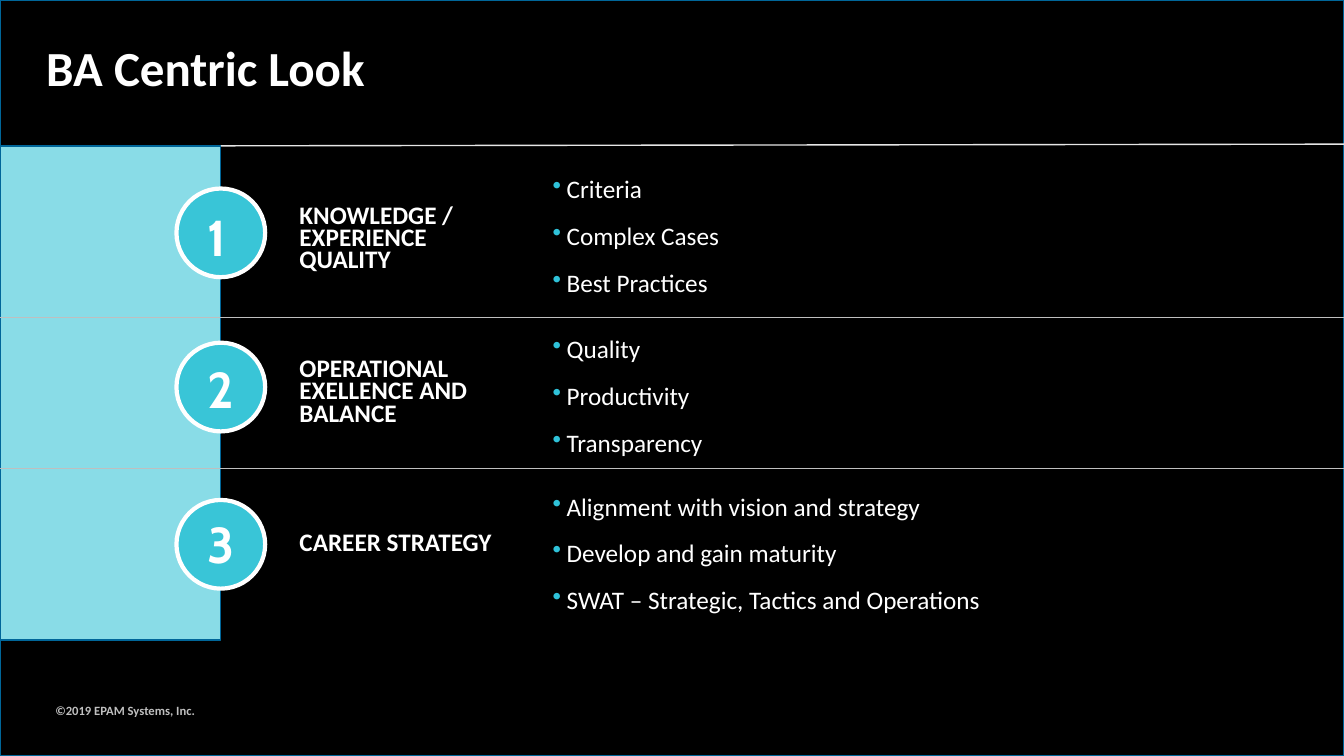
from lxml.etree import SubElement
from pptx import Presentation
from pptx.dml.color import RGBColor
from pptx.enum.shapes import MSO_CONNECTOR, MSO_SHAPE
from pptx.enum.text import MSO_ANCHOR
from pptx.oxml.ns import qn
from pptx.util import Inches, Pt

BLACK = RGBColor(0x00, 0x00, 0x00)
WHITE = RGBColor(0xFF, 0xFF, 0xFF)
BLUE = RGBColor(0x00, 0x66, 0x99)
AQUA = RGBColor(0x89, 0xDC, 0xE7)
TEAL = RGBColor(0x39, 0xC5, 0xD7)
BULLET = RGBColor(0x2F, 0xC2, 0xD9)
GREY = RGBColor(0xBF, 0xBF, 0xBF)
PALE = RGBColor(0xE6, 0xE6, 0xE6)

WIDTH, HEIGHT = 13.33, 7.5
HEADLINE = {"line_spacing": 0.9}
TOPIC = {"line_spacing": Pt(16), "space_after": Pt(3)}
POINT = {"line_spacing": 1.2, "space_after": Pt(7.5)}
FLUSH = {"margin_left": 0, "margin_top": 0, "margin_right": 0, "margin_bottom": 0,
         "vertical_anchor": MSO_ANCHOR.MIDDLE}

SECTIONS = [
    ("KNOWLEDGE / EXPERIENCE QUALITY", ["Criteria", "Complex Cases", "Best Practices"],
     {"topic": 1.73, "points": 1.65, "circle": 1.87, "number": 2.0}),
    ("OPERATIONAL EXELLENCE AND BALANCE", ["Quality", "Productivity", "Transparency"],
     {"topic": 3.25, "points": 3.24, "circle": 3.4, "number": 3.5}),
    ("CAREER STRATEGY",
     ["Alignment with vision and strategy", "Develop and gain maturity",
      "SWAT – Strategic, Tactics and Operations"],
     {"topic": 4.76, "points": 4.8, "circle": 4.96, "number": 5.04}),
]


def apply(target, values):
    for name, value in values.items():
        setattr(target, name, value)


class SlideBuilder:
    """Holds the text style and the slide, and draws each kind of element."""

    def __init__(self, slide, font="Calibri", size=18, color=WHITE):
        self.slide = slide
        self.style = {"name": font, "size": size, "color": color, "bold": True}

    def shape(self, preset, box, fill, outline, weight=1):
        panel = self.slide.shapes.add_shape(preset, *map(Inches, box))
        panel.shadow.inherit = False
        panel.fill.solid()
        panel.fill.fore_color.rgb = fill
        panel.line.color.rgb = outline
        panel.line.width = Pt(weight)

    def rule(self, left_y, right_y, color):
        divider = self.slide.shapes.add_connector(
            MSO_CONNECTOR.STRAIGHT, Inches(0), Inches(left_y), Inches(WIDTH), Inches(right_y))
        divider.line.color.rgb = color
        divider.line.width = Pt(1)
        SubElement(divider.element.spPr, qn("a:effectLst"))

    def text(self, lines, box, layout=None, spacing=None, bulleted=False, **changes):
        style = self.style | changes
        frame = self.slide.shapes.add_textbox(*map(Inches, box)).text_frame
        apply(frame, {"word_wrap": True} | (layout or {}))
        for index, line in enumerate(lines):
            paragraph = frame.add_paragraph() if index else frame.paragraphs[0]
            apply(paragraph, spacing or {})
            if bulleted:
                self.bullet(paragraph)
            run = paragraph.add_run()
            run.text = line
            apply(run.font, {"name": style["name"], "size": Pt(style["size"]),
                             "bold": style["bold"]})
            run.font.color.rgb = style["color"]

    def bullet(self, paragraph):
        properties = paragraph._p.get_or_add_pPr()
        indent = Inches(0.14)
        properties.set("marL", str(indent))
        properties.set("indent", str(-indent))
        tint = SubElement(properties, qn("a:buClr"))
        SubElement(tint, qn("a:srgbClr"), val=str(BULLET))
        SubElement(properties, qn("a:buChar"), char="•")


def main():
    deck = Presentation()
    deck.slide_width, deck.slide_height = Inches(WIDTH), Inches(HEIGHT)
    builder = SlideBuilder(deck.slides.add_slide(deck.slide_layouts[6]))

    builder.shape(MSO_SHAPE.RECTANGLE, (0, 0, WIDTH, HEIGHT), BLACK, BLUE)
    builder.rule(1.45, 1.43, PALE)
    builder.text(["©2019 EPAM Systems, Inc."], (0.45, 6.94, 7.55, 0.33),
                 spacing=HEADLINE, size=9, color=GREY)
    builder.text(["BA Centric Look"], (0.36, 0.39, 12.62, 0.45), spacing=HEADLINE, size=35)

    builder.shape(MSO_SHAPE.RECTANGLE, (0, 1.45, 2.19, 4.9), AQUA, BLUE)
    for divider_y in (3.15, 4.65):
        builder.rule(divider_y, divider_y, GREY)

    for number, (topic, points, top) in enumerate(SECTIONS, 1):
        builder.text([topic], (2.97, top["topic"], 2.09, 1.31), FLUSH, TOPIC)
        builder.text(points, (5.48, top["points"], 7.89, 1.31), FLUSH, POINT,
                     bulleted=True, bold=False)
        builder.shape(MSO_SHAPE.OVAL, (1.75, top["circle"], 0.88, 0.88), TEAL, WHITE, 3)
        builder.text([str(number)], (1.96, top["number"], 0.47, 0.71), name="Cabin", size=36)

    deck.save("out.pptx")


if __name__ == "__main__":
    main()
